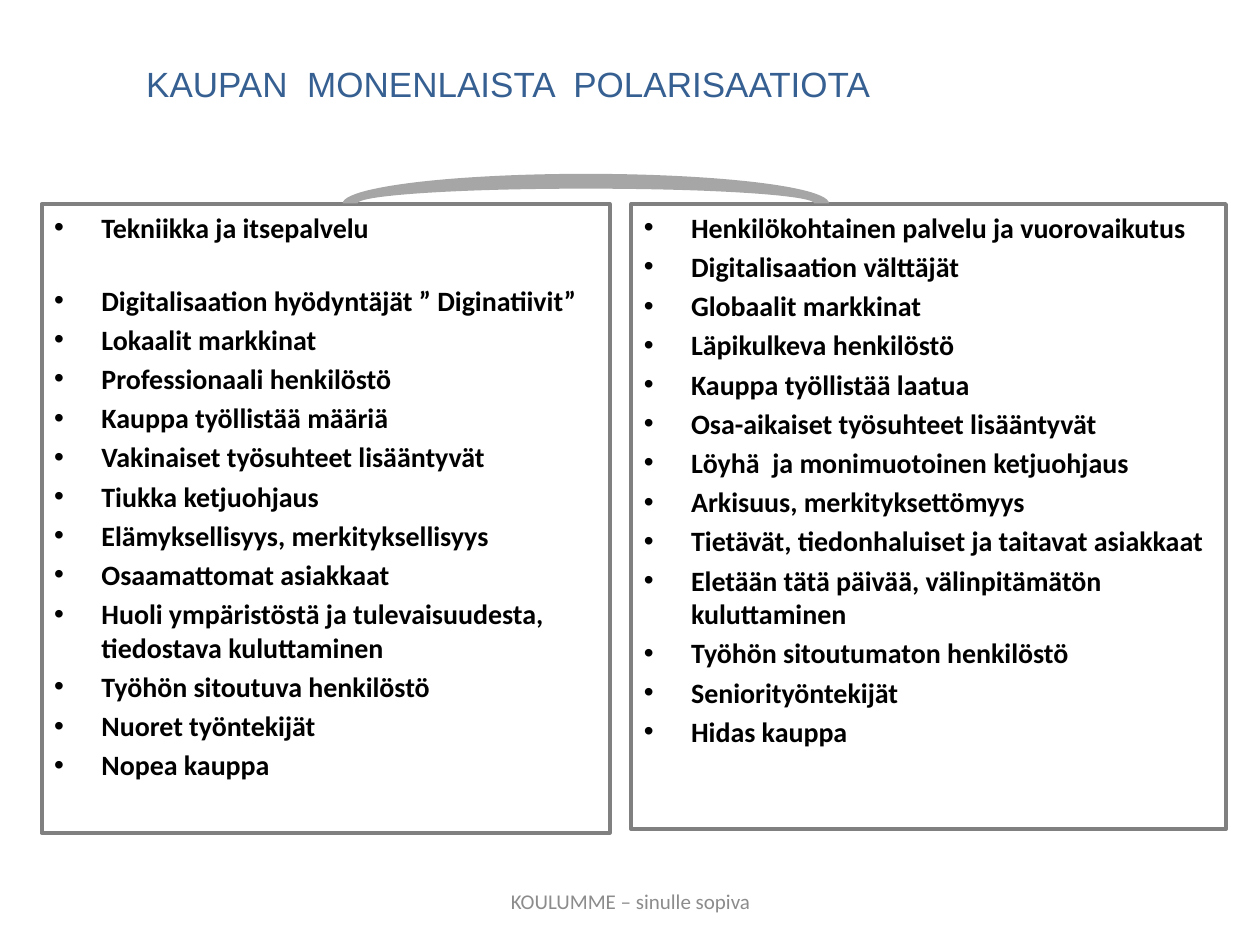
from pptx import Presentation
from pptx.dml.color import RGBColor
from pptx.enum.shapes import MSO_SHAPE
from pptx.enum.text import MSO_ANCHOR, MSO_AUTO_SIZE, PP_ALIGN
from pptx.util import Inches, Pt

BLACK = RGBColor(0x00, 0x00, 0x00)
TITLE_BLUE = RGBColor(0x37, 0x60, 0x92)
BORDER_GRAY = RGBColor(0x80, 0x80, 0x80)
ARC_GRAY = RGBColor(0xA6, 0xA6, 0xA6)
FOOTER_GRAY = RGBColor(0x8C, 0x8C, 0x8C)

COLUMN_TOP = 1.62
# \v is a line break inside the paragraph
LEFT_ITEMS = [
    "Tekniikka ja itsepalvelu\v",
    "Digitalisaation hyödyntäjät ” Diginatiivit”",
    "Lokaalit markkinat",
    "Professionaali henkilöstö",
    "Kauppa työllistää määriä",
    "Vakinaiset työsuhteet lisääntyvät",
    "Tiukka ketjuohjaus",
    "Elämyksellisyys, merkityksellisyys",
    "Osaamattomat asiakkaat",
    "Huoli ympäristöstä ja tulevaisuudesta, tiedostava kuluttaminen",
    "Työhön sitoutuva henkilöstö",
    "Nuoret työntekijät",
    "Nopea kauppa",
]
RIGHT_ITEMS = [
    "Henkilökohtainen palvelu ja vuorovaikutus",
    "Digitalisaation välttäjät",
    "Globaalit markkinat",
    "Läpikulkeva henkilöstö",
    "Kauppa työllistää laatua",
    "Osa-aikaiset työsuhteet lisääntyvät",
    "Löyhä  ja monimuotoinen ketjuohjaus",
    "Arkisuus, merkityksettömyys",
    "Tietävät, tiedonhaluiset ja taitavat asiakkaat",
    "Eletään tätä päivää, välinpitämätön kuluttaminen",
    "Työhön sitoutumaton henkilöstö",
    "Seniorityöntekijät",
    "Hidas kauppa",
]


def place(shape, left, top, width, height):
    shape.left, shape.top = Inches(left), Inches(top)
    shape.width, shape.height = Inches(width), Inches(height)


def style_font(font, name, size, color, bold=False):
    font.name = name
    font.size = Pt(size)
    font.color.rgb = color
    font.bold = bold


def write_line(frame, text, align, font_name, size, color):
    frame.word_wrap = True
    frame.vertical_anchor = MSO_ANCHOR.MIDDLE
    frame.text = text
    line = frame.paragraphs[0]
    line.alignment = align
    style_font(line.runs[0].font, font_name, size, color)


def fill_column(column, items, left, width, height):
    """Bullets, indents and paragraph spacing come from the layout."""
    place(column, left, COLUMN_TOP, width, height)
    column.line.color.rgb = BORDER_GRAY
    column.line.width = Pt(2.25)
    frame = column.text_frame
    frame.auto_size = MSO_AUTO_SIZE.NONE
    frame.text = "\n".join(items)
    frame.paragraphs[0].space_before = Pt(0)
    for item in frame.paragraphs:
        style_font(item.font, "Calibri", 16, BLACK, bold=True)
        for run in item.runs:
            style_font(run.font, "Calibri", 16, BLACK, bold=True)


def add_linking_arc(slide):
    arc = slide.shapes.add_shape(MSO_SHAPE.BLOCK_ARC, Inches(2.72), Inches(1.38),
                                 Inches(3.86), Inches(0.47))
    arc.shadow.inherit = False
    arc.fill.solid()
    arc.fill.fore_color.rgb = ARC_GRAY
    arc.line.fill.background()


def main():
    prs = Presentation()
    prs.slide_width, prs.slide_height = Inches(10), Inches(7.5)
    two_content = prs.slide_layouts[3]
    slide = prs.slides.add_slide(two_content)

    title = slide.shapes.title
    place(title, 1.06, 0.44, 7.88, 0.44)
    write_line(title.text_frame, "KAUPAN  MONENLAISTA  POLARISAATIOTA",
               PP_ALIGN.LEFT, "Arial", 20, TITLE_BLUE)

    fill_column(slide.placeholders[1], LEFT_ITEMS, 0.33, 4.51, 4.99)
    fill_column(slide.placeholders[2], RIGHT_ITEMS, 5.01, 4.72, 4.96)

    footer = slide.shapes.add_textbox(Inches(3.42), Inches(6.95), Inches(3.17), Inches(0.4))
    write_line(footer.text_frame, "KOULUMME – sinulle sopiva",
               PP_ALIGN.CENTER, "Calibri", 12, FOOTER_GRAY)

    add_linking_arc(slide)
    prs.save("out.pptx")


if __name__ == "__main__":
    main()
